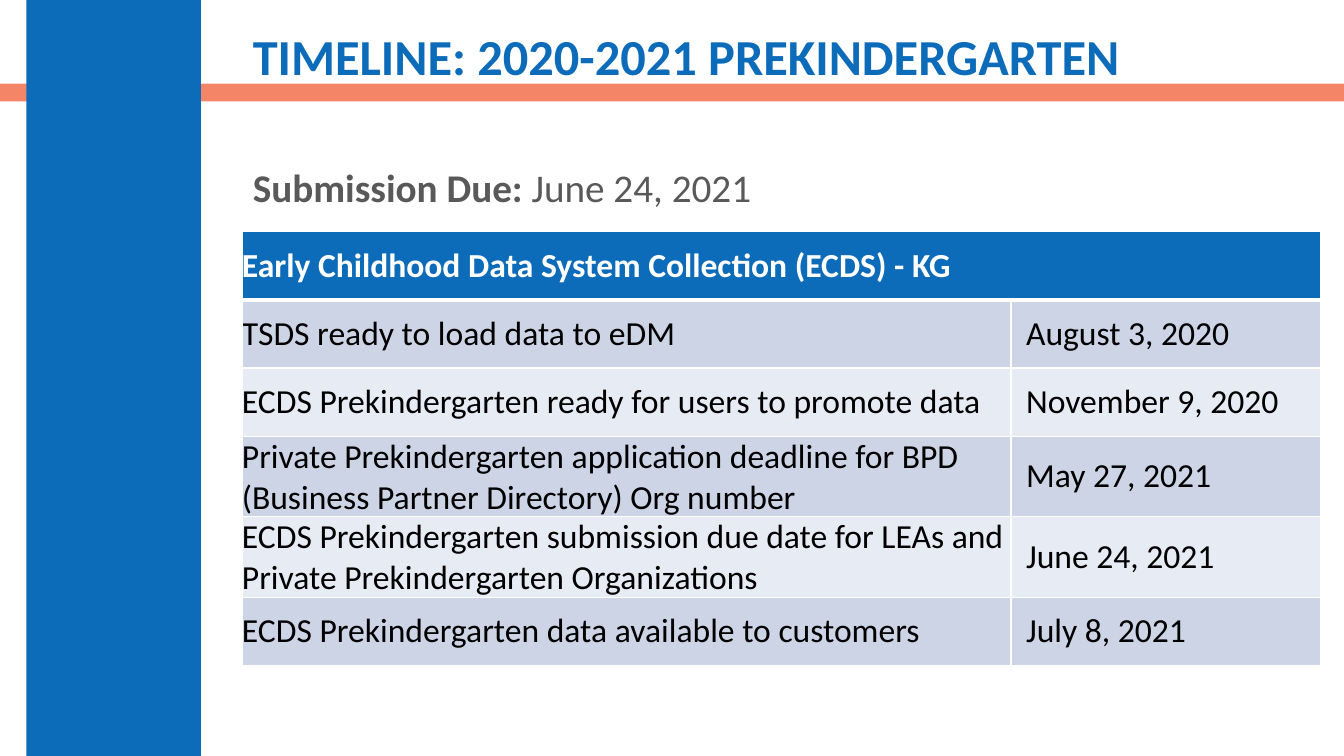
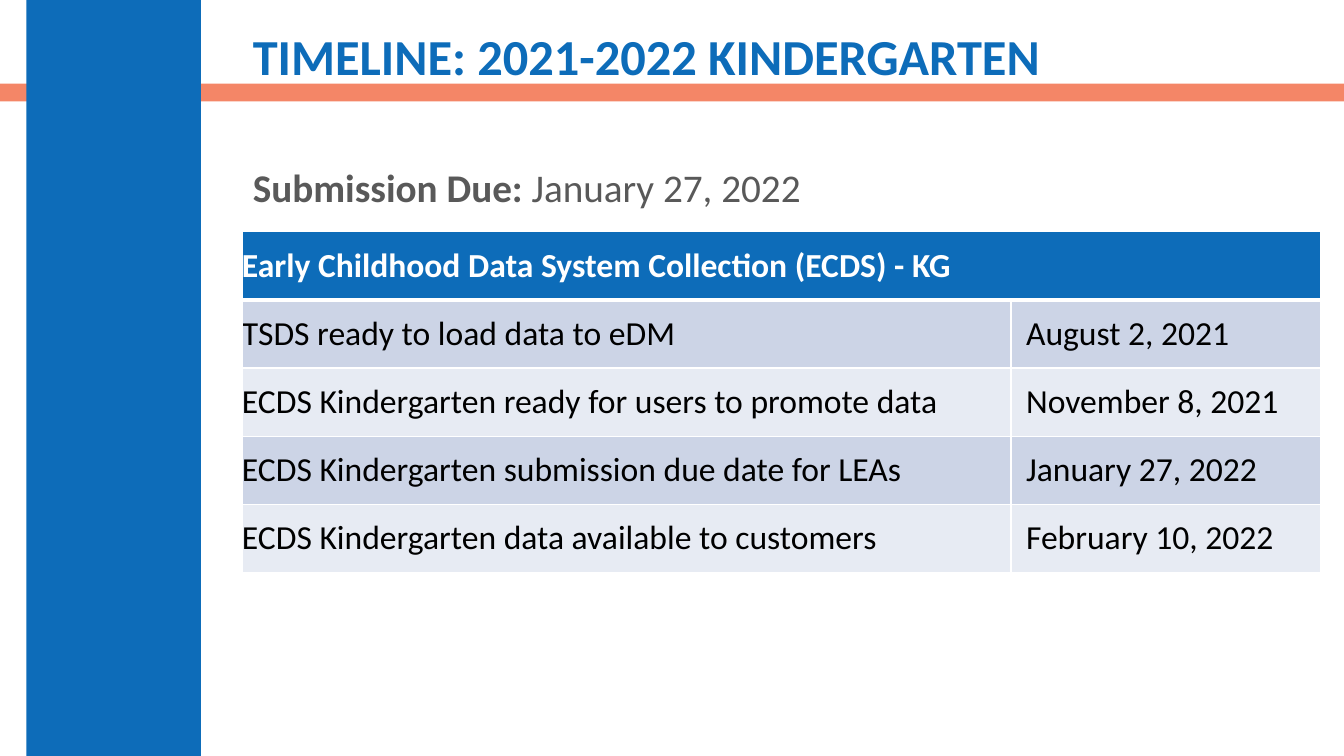
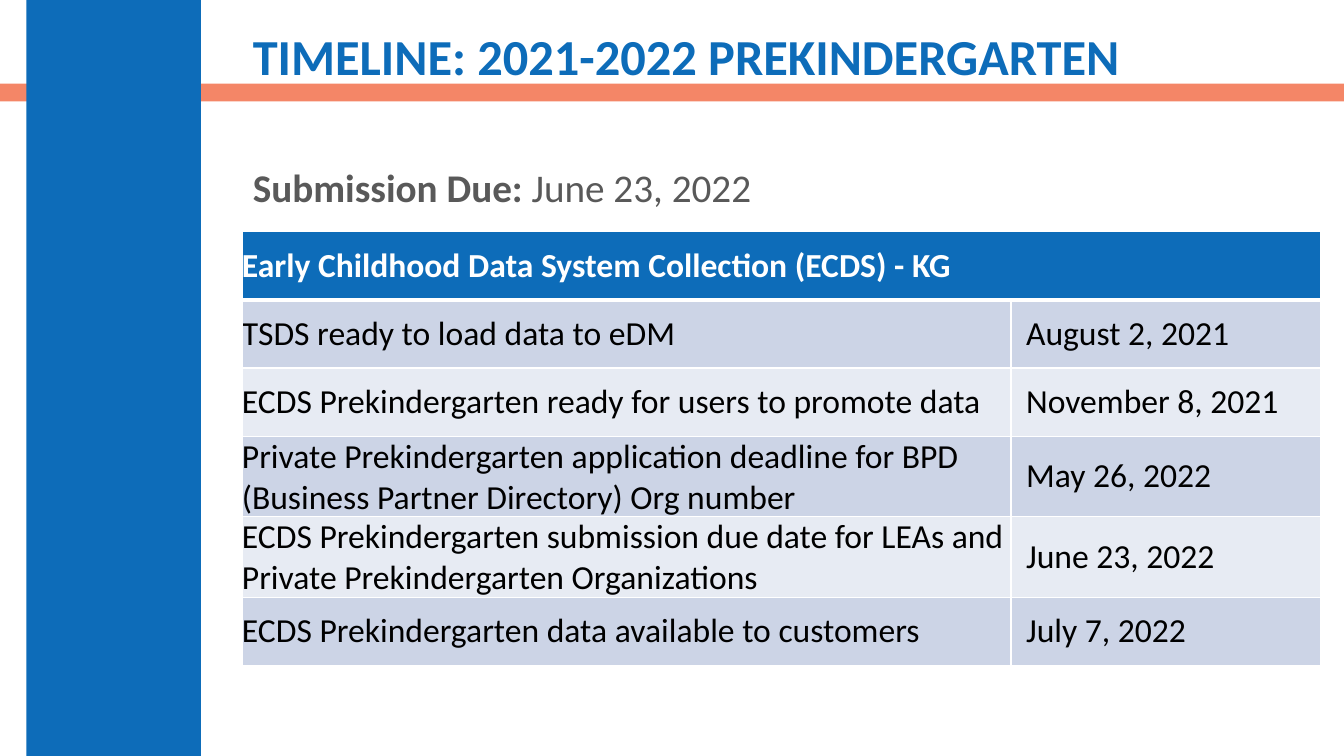
from lxml.etree import SubElement
from pptx import Presentation
from pptx.dml.color import RGBColor
from pptx.enum.shapes import MSO_SHAPE
from pptx.enum.text import MSO_ANCHOR
from pptx.oxml.ns import qn
from pptx.util import Pt

WIDE, HIGH = 960, 540
FONT = "Calibri"
BLUE, CORAL, GRAY = "0D6CB9", "F16038", "595959"
WHITE, BLACK = "FFFFFF", "000000"
BANDS = "CCD4E6", "E7EBF3"
HEAD = "Early Childhood Data System Collection (ECDS) - KG"
COLS = 549.3, 221.1
ROW = 48.65
INDENT = 10.85

KINDER = (
    "TSDS ready to load data to eDM",
    "ECDS Kindergarten ready for users to promote data",
    "ECDS Kindergarten submission due date for LEAs",
    "ECDS Kindergarten data available to customers",
)
PREK = (
    "TSDS ready to load data to eDM",
    "ECDS Prekindergarten ready for users to promote data",
    "Private Prekindergarten application deadline for BPD "
    "(Business Partner Directory) Org number",
    "ECDS Prekindergarten submission due date for LEAs and "
    "Private Prekindergarten Organizations",
    "ECDS Prekindergarten data available to customers",
)
# Title, due date, steps, dates
SLIDES = (
    ("TIMELINE: 2020-2021 PREKINDERGARTEN", "June 24, 2021", PREK,
     ("August 3, 2020", "November 9, 2020", "May 27, 2021",
      "June 24, 2021", "July 8, 2021")),
    ("TIMELINE: 2021-2022 KINDERGARTEN", "January 27, 2022", KINDER,
     ("August 2, 2021", "November 8, 2021", "January 27, 2022",
      "February 10, 2022")),
    ("TIMELINE: 2021-2022 PREKINDERGARTEN", "June 23, 2022", PREK,
     ("August 2, 2021", "November 8, 2021", "May 26, 2022",
      "June 23, 2022", "July 7, 2022")),
)


def paint(color, value):
    color.rgb = RGBColor.from_string(value)


def style(font, size, color, bold=False):
    font.name, font.size, font.bold = FONT, Pt(size), bold
    paint(font.color, color)


def add_bar(slide, box, color, alpha=100):
    """Draw a plain filled bar; alpha is its opacity in percent."""
    bar = slide.shapes.add_shape(MSO_SHAPE.RECTANGLE, *map(Pt, box))
    bar.shadow.inherit = False
    bar.line.fill.background()
    bar.fill.solid()
    paint(bar.fill.fore_color, color)
    if alpha < 100:
        tint = next(bar._element.spPr.iter(qn("a:srgbClr")))
        SubElement(tint, qn("a:alpha"), val=str(alpha * 1000))


def add_bands(slide):
    add_bar(slide, (0, 59.8, WIDE, 12.6), CORAL, 76)
    add_bar(slide, (18.9, 0, 124.6, HIGH), BLUE)


def add_line(slide, box, size, color, parts, anchor=MSO_ANCHOR.TOP):
    """Write one paragraph from (text, bold) parts."""
    frame = slide.shapes.add_textbox(*map(Pt, box)).text_frame
    frame.word_wrap = True
    frame.vertical_anchor = anchor
    para = frame.paragraphs[0]
    para.line_spacing = 0.9
    style(para.font, size, color)
    for text, bold in parts:
        run = para.add_run()
        run.text = text
        style(run.font, size, color, bold)


def add_edges(cell, top, bottom):
    """Give a cell white borders, with the given top and bottom widths."""
    props = cell._tc.get_or_add_tcPr()
    for side, width in zip("LRTB", (1, 1, top, bottom)):
        edge = SubElement(props, qn("a:ln" + side), w=str(Pt(width)))
        fill = SubElement(edge, qn("a:solidFill"))
        SubElement(fill, qn("a:srgbClr"), val=WHITE)


def fill_cell(cell, text, back, color, bold=False, left=0, top=1, bottom=1):
    add_edges(cell, top, bottom)
    cell.fill.solid()
    paint(cell.fill.fore_color, back)
    cell.margin_left = Pt(left)
    cell.margin_right = cell.margin_top = cell.margin_bottom = 0
    cell.vertical_anchor = MSO_ANCHOR.MIDDLE
    cell.text = text
    style(cell.text_frame.paragraphs[0].font, 24, color, bold)


def add_dates(slide, left, top, steps, dates):
    """Place the table of steps and dates."""
    count = len(steps) + 1
    table = slide.shapes.add_table(
        count, 2, Pt(left), Pt(top), Pt(sum(COLS)), Pt(ROW * count)).table
    table.first_row = table.horz_banding = False
    for col, width in zip(table.columns, COLS):
        col.width = Pt(width)
    for row in table.rows:
        row.height = Pt(ROW)
    for col, text in enumerate((HEAD, "")):
        fill_cell(table.cell(0, col), text, BLUE, WHITE, True, bottom=3)
    table.cell(0, 0).merge(table.cell(0, 1))
    for row, pair in enumerate(zip(steps, dates), 1):
        for col, text in enumerate(pair):
            fill_cell(table.cell(row, col), text, BANDS[(row - 1) % 2], BLACK,
                      left=INDENT * col, top=3 if row == 1 else 1)


def add_slide(deck, title, due, steps, dates):
    slide = deck.slides.add_slide(deck.slide_layouts[6])
    add_bands(slide)
    add_line(slide, (173.5, 13, 758, 59), 36, BLUE, [(title, True)],
             MSO_ANCHOR.MIDDLE)
    add_line(slide, (173.5, 116.6, 708, 342.7), 28, GRAY,
             [("Submission Due: ", True), (due, False)])
    add_dates(slide, 172.8, 165.6, steps, dates)


def main():
    deck = Presentation()
    deck.slide_width, deck.slide_height = Pt(WIDE), Pt(HIGH)
    for content in SLIDES:
        add_slide(deck, *content)
    deck.save("out.pptx")


if __name__ == "__main__":
    main()
